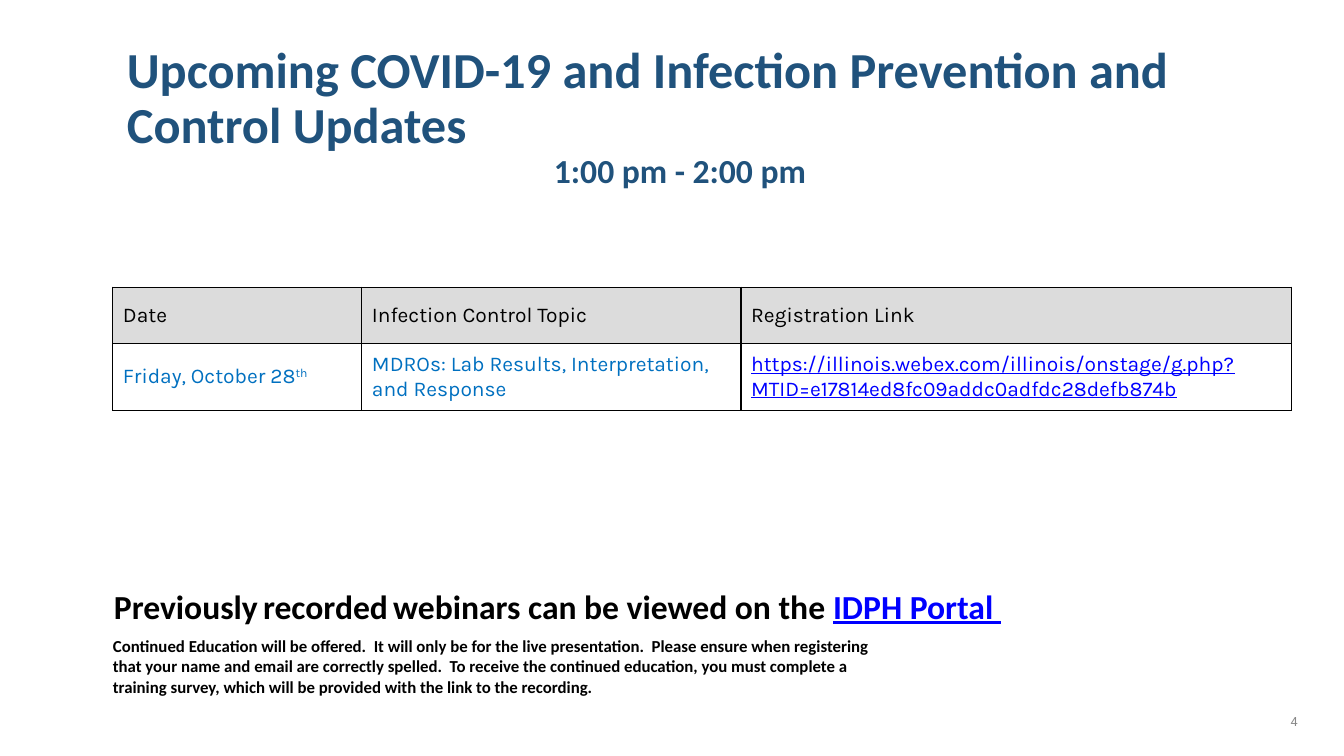
from lxml import etree
from pptx import Presentation
from pptx import util as u
from pptx.dml.color import RGBColor
from pptx.enum import text
from pptx.oxml.ns import qn

NAVY = RGBColor(0x20, 0x52, 0x7C)
BLACK = RGBColor(0, 0, 0)
GREY = RGBColor(0x88, 0x88, 0x88)
HEADER_GREY = RGBColor(0xDC, 0xDC, 0xDC)
TOPIC_BLUE = RGBColor(0x00, 0x70, 0xC0)
LINK_BLUE = RGBColor(0, 0, 0xFF)
NO_FILL = None


def add_run(paragraph, wording, font="Calibri", size=24, color=BLACK,
            bold=False, underline=False, baseline=0):
    """Append formatted text; baseline is a raise in percent."""
    run = paragraph.add_run()
    run.text = wording
    run.font.name = font
    run.font.size = u.Pt(size)
    run.font.color.rgb = color
    run.font.bold = bold
    run.font.underline = underline
    if baseline:
        run.font._element.set("baseline", str(baseline * 1000))


def add_borders(cell, color=BLACK, width=1):
    properties = cell._tc.get_or_add_tcPr()
    for side in ("lnL", "lnR", "lnT", "lnB"):
        line = etree.SubElement(properties, qn(f"a:{side}"), w=str(u.Pt(width)))
        fill = etree.SubElement(line, qn("a:solidFill"))
        etree.SubElement(fill, qn("a:srgbClr"), val=str(color))


class SlideBuilder:
    """Places elements by percentages of the slide's width and height."""

    def __init__(self, presentation):
        self.width = presentation.slide_width
        self.height = presentation.slide_height
        self.slide = presentation.slides.add_slide(presentation.slide_layouts[6])

    def across(self, share):
        return u.Emu(round(self.width * share / 100))

    def down(self, share):
        return u.Emu(round(self.height * share / 100))

    def text_box(self, left, top, width, height, paragraphs, side_inset=0.05,
                 wrap=True, anchor=text.MSO_ANCHOR.TOP):
        """Each paragraph is (alignment, line spacing, [(wording, format)])."""
        shape = self.slide.shapes.add_textbox(
            self.across(left), self.down(top), self.across(width), self.down(height))
        frame = shape.text_frame
        frame.word_wrap = wrap
        frame.auto_size = text.MSO_AUTO_SIZE.SHAPE_TO_FIT_TEXT
        frame.vertical_anchor = anchor
        frame.margin_left = frame.margin_right = u.Inches(side_inset)
        frame.margin_top = frame.margin_bottom = u.Inches(0.05)
        for index, (alignment, spacing, runs) in enumerate(paragraphs):
            paragraph = frame.add_paragraph() if index else frame.paragraphs[0]
            paragraph.alignment = alignment
            paragraph.line_spacing = spacing
            for wording, style in runs:
                add_run(paragraph, wording, **style)

    def table(self, left, top, columns, rows, contents, fills):
        """Each cell in contents is a list of (wording, format)."""
        table = self.slide.shapes.add_table(
            len(rows), len(columns), self.across(left), self.down(top),
            self.across(sum(columns)), self.down(sum(rows))).table
        table.first_row = table.horz_banding = False
        for column, share in zip(table.columns, columns):
            column.width = self.across(share)
        for row, share, cells, fill in zip(table.rows, rows, contents, fills):
            row.height = self.down(share)
            for cell, runs in zip(row.cells, cells):
                cell.vertical_anchor = text.MSO_ANCHOR.MIDDLE
                add_borders(cell)
                if fill is NO_FILL:
                    cell.fill.background()
                else:
                    cell.fill.solid()
                    cell.fill.fore_color.rgb = fill
                for wording, style in runs:
                    add_run(cell.text_frame.paragraphs[0], wording,
                            font="Karla", size=15, **style)


def main():
    presentation = Presentation()
    presentation.slide_width = u.Inches(13.33)
    presentation.slide_height = u.Inches(7.5)
    builder = SlideBuilder(presentation)
    left, center, right = (text.PP_ALIGN.LEFT, text.PP_ALIGN.CENTER,
                           text.PP_ALIGN.RIGHT)
    bold = dict(bold=True)
    gap = (" ", dict(size=16))
    topic = dict(color=TOPIC_BLUE)
    link = dict(color=LINK_BLUE, underline=True)

    builder.text_box(8.1, 83.47, 57.46, 9.47, [(left, 1, [(
        "Continued Education will be offered.  It will only be for the live "
        "presentation.  Please ensure when registering that your name and email "
        "are correctly spelled.  To receive the continued education, you must "
        "complete a training survey, which will be provided with the link to "
        "the recording.", dict(size=12, bold=True))])], side_inset=0.04)

    builder.text_box(8.7, 5.33, 83.8, 20.8, [
        (left, 0.9, [("Upcoming COVID-19 and Infection Prevention and Control Updates",
                      dict(size=36, color=NAVY, bold=True))]),
        (center, 0.9, [("1:00 pm - 2:00 pm", dict(color=NAVY, bold=True))]),
    ], side_inset=0.1)

    headings = ("Date", "Infection Control Topic", "Registration Link")
    webinar = [
        [("Friday, October 28", topic), ("th", dict(topic, baseline=30))],
        [("MDROs: Lab Results, Interpretation, and Response", topic)],
        [("https://illinois.webex.com/illinois/onstage/g.php?"
          "MTID=e17814ed8fc09addc0adfdc28defb874b", link)],
    ]
    builder.table(8.4, 38, columns=(18.53, 28.21, 40.96), rows=(7.47, 8.8),
                  contents=[[[(heading, {})] for heading in headings], webinar],
                  fills=(HEADER_GREY, NO_FILL))

    builder.text_box(8.1, 76.8, 83.8, 6.67, [(left, 1, [
        ("Previously", bold), gap, ("recorded", bold), gap,
        ("webinars can be viewed on the ", bold),
        ("IDPH Portal ", dict(link, bold=True))])])

    builder.text_box(95.05, 93.73, 1.88, 3.33, [
        (right, 1, [("4", dict(font="Roboto", size=9, color=GREY))])],
        wrap=False, anchor=text.MSO_ANCHOR.MIDDLE)

    presentation.save("out.pptx")


if __name__ == "__main__":
    main()
